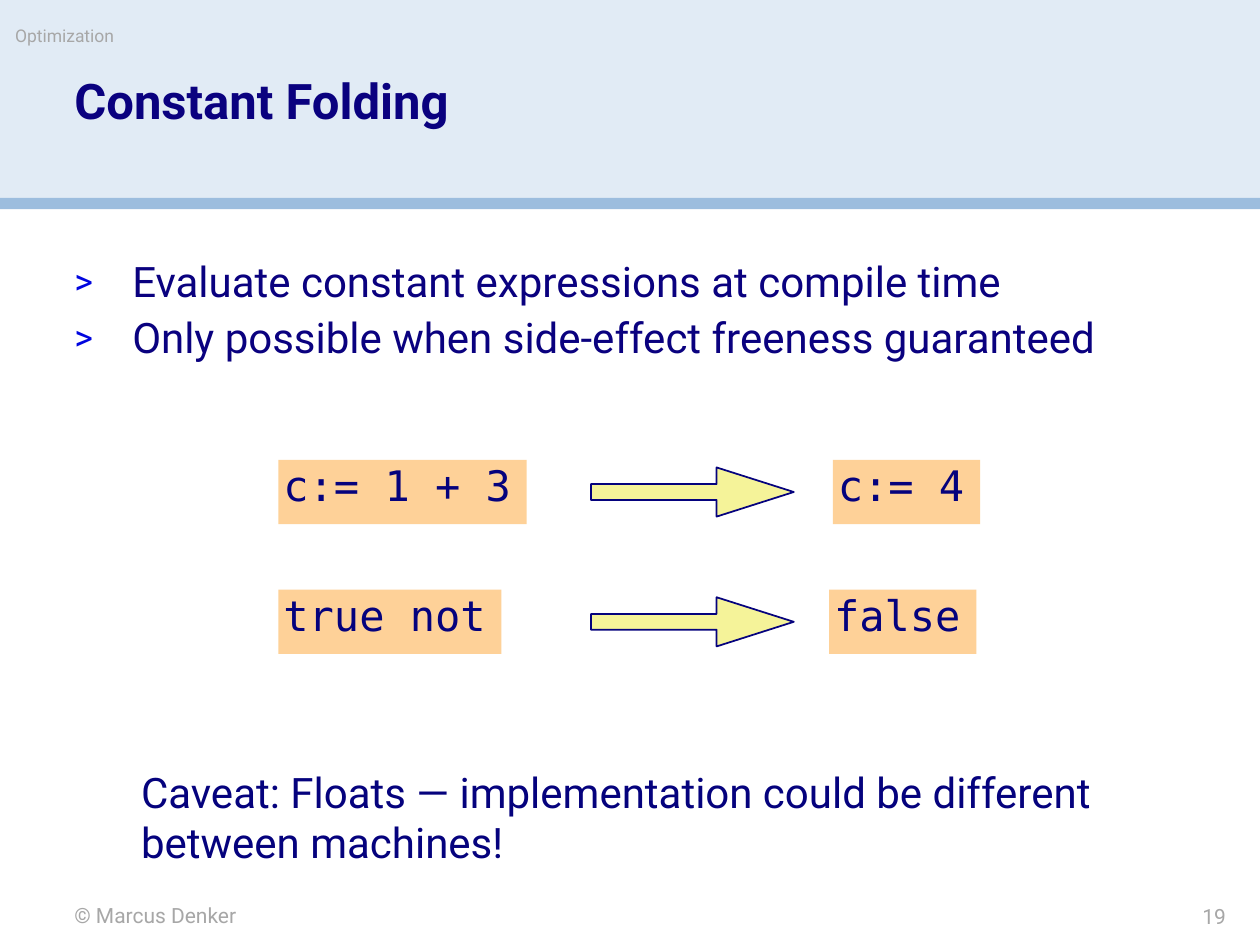
from dataclasses import dataclass

from lxml.etree import SubElement as Sub
from pptx import Presentation
from pptx.dml.color import RGBColor as Rgb
from pptx.enum.shapes import MSO_SHAPE as Kind
from pptx.enum.text import MSO_ANCHOR as Anchor, PP_ALIGN as Align
from pptx.oxml.ns import qn
from pptx.util import Inches, Pt


@dataclass(frozen=True)
class Theme:
    sans: str = "Roboto"
    mono: str = "DejaVu Sans Mono"
    band: str = "E1EBF5"
    rule: str = "9CBDDE"
    gray: str = "A7A7A7"
    navy: str = "0A017F"
    ink: str = "05027D"
    mark: str = "0005DF"
    code: str = "FED198"
    arrow: str = "F5F399"
    tiny: int = 10
    small: int = 12
    body: int = 24
    title: int = 28


T = Theme()
INSET = {"margin_left": Inches(0.04), "margin_right": Inches(0.04)}


def apply(obj, **vals):
    for key, val in vals.items():
        setattr(obj, key, val)


def place(box):
    return [Inches(v) for v in box]


def write(shape, lines, size, color, font=T.sans, bold=False, frame=None, para=None):
    text = shape.text_frame
    base = dict(margin_left=0, margin_top=0, margin_right=0, margin_bottom=0,
                word_wrap=True, vertical_anchor=Anchor.TOP)
    apply(text, **(base | (frame or {})))
    text.text = "\n".join(lines)
    for par in text.paragraphs:
        apply(par, **({"alignment": Align.LEFT} | (para or {})))
        run = par.runs[0]
        apply(run.font, name=font, size=Pt(size), bold=bold)
        run.font.color.rgb = Rgb.from_string(color)
    return shape


def label(slide, box, lines, size, color, **opts):
    return write(slide.shapes.add_textbox(*place(box)), lines, size, color, **opts)


def block(slide, kind, box, fill, line=None):
    shape = slide.shapes.add_shape(kind, *place(box))
    shape.shadow.inherit = False
    shape.fill.solid()
    shape.fill.fore_color.rgb = Rgb.from_string(fill)
    if line:
        shape.line.color.rgb = Rgb.from_string(line)
        shape.line.width = Pt(1)
    else:
        shape.line.fill.background()
    return shape


def code(slide, box, text):
    shape = block(slide, Kind.RECTANGLE, box, T.code)
    write(shape, [text], T.body, T.ink, font=T.mono, frame=INSET)


def arrow(slide, box):
    shape = block(slide, Kind.RIGHT_ARROW, box, T.arrow, T.ink)
    shape.adjustments[0] = 0.32
    shape.adjustments[1] = 1.57


def bullet(par):
    props = par._p.get_or_add_pPr()
    for key, val in {"marL": Inches(0.46), "indent": -Inches(0.46)}.items():
        props.set(key, str(val))
    Sub(Sub(props, qn("a:buClr")), qn("a:srgbClr"), val=T.mark)
    Sub(props, qn("a:buSzPct"), val="85000")
    Sub(props, qn("a:buFont"), typeface=T.sans)
    Sub(props, qn("a:buChar"), char=">")


def points(slide, box, lines):
    shape = label(slide, box, lines, T.body, T.navy,
                  frame={"vertical_anchor": Anchor.MIDDLE},
                  para={"line_spacing": 0.95, "space_before": Pt(4.8)})
    for par in shape.text_frame.paragraphs:
        bullet(par)


def main():
    deck = Presentation()
    apply(deck, slide_width=Inches(10), slide_height=Inches(7.5))
    slide = deck.slides.add_slide(deck.slide_layouts[6])

    block(slide, Kind.RECTANGLE, (0, 0, 10, 1.58), T.band)
    block(slide, Kind.RECTANGLE, (0, 1.57, 10, 0.09), T.rule)
    label(slide, (0.59, 7.16, 4.17, 0.2), ["© Marcus Denker"], T.small, T.gray)
    label(slide, (0.12, 0.2, 0.85, 0.17), ["Optimization"], T.tiny, T.gray)
    label(slide, (0.59, 0.61, 8.83, 0.89), ["Constant Folding"], T.title, T.navy,
          bold=True, para={"line_spacing": 0.9})
    points(slide, (0.59, 1.66, 8.83, 1.62),
           ["Evaluate constant expressions at compile time",
            "Only possible when side-effect freeness guaranteed"])

    folds = [("c:= 1 + 3", 1.97, "c:= 4", 6.61),
             ("true not", 1.77, "false", 6.58)]
    for row, (before, width, after, left) in enumerate(folds):
        top = 3.65 + 1.03 * row
        code(slide, (2.21, top, width, 0.51), before)
        arrow(slide, (4.69, top + 0.06, 1.61, 0.39))
        code(slide, (left, top, 1.17, 0.51), after)

    label(slide, (1.08, 6.08, 8, 0.81),
          ["Caveat: Floats — implementation could be different between machines!"],
          T.body, T.ink, frame=INSET)
    label(slide, (8.25, 7.17, 1.48, 0.2), ["19"], T.small, T.gray,
          para={"alignment": Align.RIGHT})
    deck.save("out.pptx")


if __name__ == "__main__":
    main()
